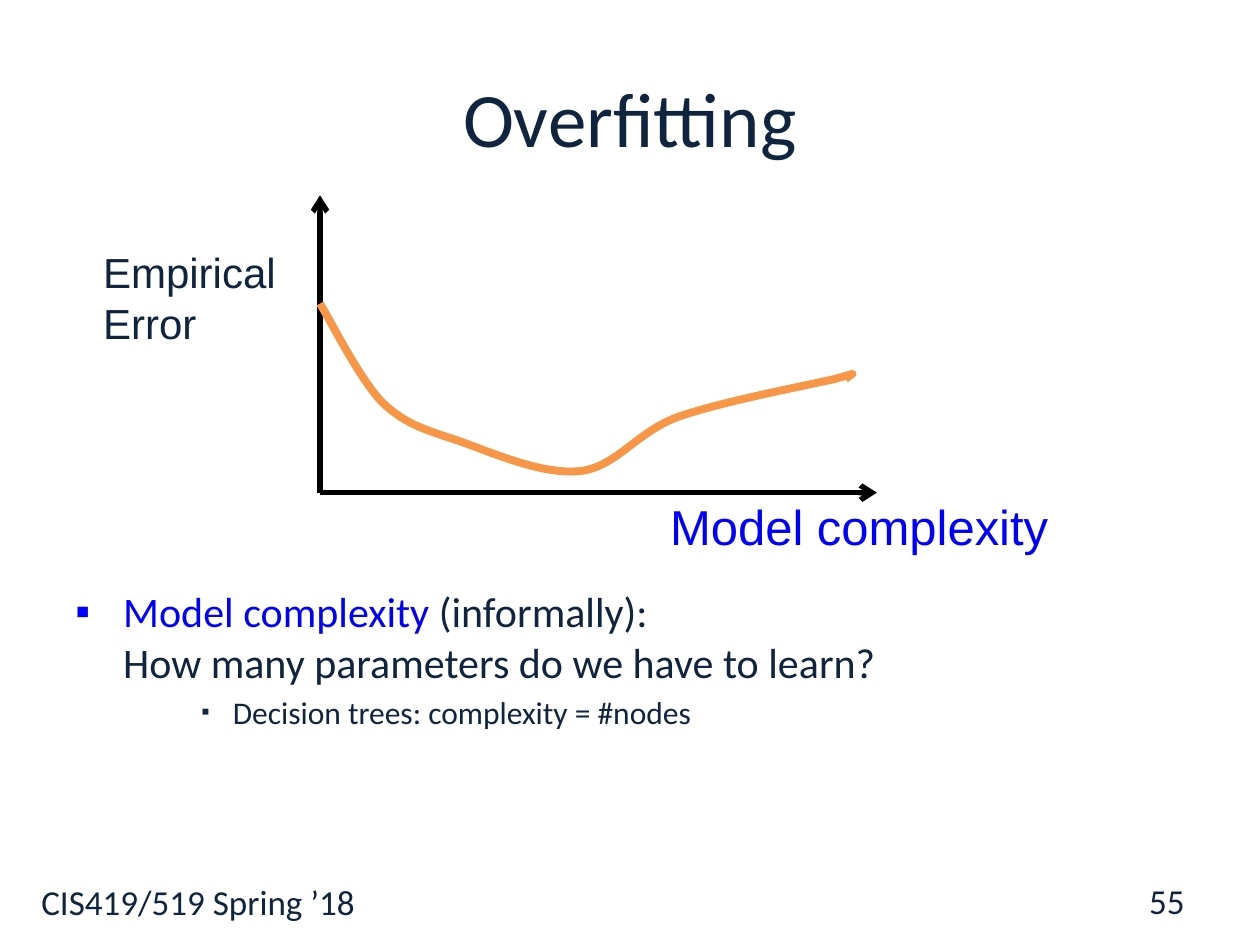
from lxml import etree
from pptx import Presentation
from pptx.dml.color import RGBColor
from pptx.enum.shapes import MSO_CONNECTOR
from pptx.enum.text import MSO_ANCHOR, PP_ALIGN
from pptx.oxml.ns import qn
from pptx.util import Inches, Pt

NAVY = RGBColor(0x0F, 0x24, 0x3E)
BLUE = RGBColor(0x00, 0x00, 0xFF)
BLACK = RGBColor(0x00, 0x00, 0x00)
ORANGE = RGBColor(0xF7, 0x96, 0x46)

# Content: text, box (left, top, width, height), size, font, colour, align, anchor
LEFT, CENTER, RIGHT = PP_ALIGN.LEFT, PP_ALIGN.CENTER, PP_ALIGN.RIGHT
TOP, MIDDLE = MSO_ANCHOR.TOP, MSO_ANCHOR.MIDDLE
LABELS = [
    ("CIS419/519 Spring ’18", (0.23, 6.94, 9.6, 0.56), 20, "Calibri", NAVY, LEFT, TOP),
    ("Model complexity", (5.22, 3.89, 3.86, 0.57), 28, "Arial", BLUE, LEFT, TOP),
    ("Empirical\nError", (0.72, 1.91, 1.94, 0.91), 24, "Arial", NAVY, LEFT, TOP),
    ("Overfitting", (0.5, 0.3, 9, 1.25), 44, "Calibri", NAVY, CENTER, MIDDLE),
    ("55", (7.17, 6.95, 2.33, 0.4), 20, "Calibri", NAVY, RIGHT, MIDDLE),
]

# Bullets: lines of (text, colour) runs, size, level, margin, hanging, bullet %
BODY_BOX = (0.5, 4.6, 9, 2.1)
BULLETS = [
    ([[("Model complexity ", BLUE), ("(informally):", NAVY)],
      [("How many parameters do we have to learn?", NAVY)]], 24, 0, 0.38, 0.38, 100),
    ([[("Decision trees: complexity = #nodes", NAVY)]], 18, 2, 1.25, 0.25, 75),
]

# Graph: axes run from the origin; curve is a start and cubic Bezier triplets
ORIGIN = (2.54, 3.91)
AXIS_ENDS = [(2.54, 1.55), (6.96, 3.91)]
CURVE = [
    (2.54, 2.41),
    (2.62, 2.54), (2.86, 3.02), (3.04, 3.2),
    (3.23, 3.38), (3.41, 3.42), (3.67, 3.51),
    (3.92, 3.6), (4.31, 3.77), (4.6, 3.74),
    (4.89, 3.71), (5.05, 3.43), (5.38, 3.31),
    (5.72, 3.19), (6.4, 3.06), (6.62, 3.01),
    (6.84, 2.95), (6.76, 2.96), (6.71, 3.01),
]

prs = Presentation()
prs.slide_width, prs.slide_height = Inches(10), Inches(7.5)
slide = prs.slides.add_slide(prs.slide_layouts[6])
shapes = slide.shapes


def add_box(box, anchor=TOP):
    tf = shapes.add_textbox(*map(Inches, box)).text_frame
    tf.word_wrap = True
    tf.vertical_anchor = anchor
    return tf


def style(run, size, font, color):
    run.font.size = Pt(size)
    run.font.name = font
    run.font.color.rgb = color


def add_axis(start, end):
    axis = shapes.add_connector(MSO_CONNECTOR.STRAIGHT, *map(Inches, start + end))
    axis.line.color.rgb = BLACK
    axis.line.width = Pt(3)
    ln = axis._element.spPr.find(qn("a:ln"))
    etree.SubElement(ln, qn("a:tailEnd"), type="arrow")
    etree.SubElement(axis._element.spPr, qn("a:effectLst"))


def add_curve(points):
    start, *rest = [(Inches(x), Inches(y)) for x, y in points]
    builder = shapes.build_freeform(*start)
    builder.add_line_segments(rest, close=False)
    sp = builder.convert_to_shape()
    sp.shadow.inherit = False
    sp.fill.background()
    sp.line.color.rgb = ORANGE
    sp.line.width = Pt(4.5)
    # Regroup every three straight segments as one cubic Bezier
    path = sp._element.find(".//" + qn("a:path"))
    segments = path.findall(qn("a:lnTo"))
    for i in range(0, len(segments), 3):
        cubic = etree.SubElement(path, qn("a:cubicBezTo"))
        for segment in segments[i:i + 3]:
            cubic.append(segment[0])
            path.remove(segment)


def set_bullet(p, margin, hanging, percent):
    pPr = p._p.get_or_add_pPr()
    pPr.set("marL", str(Inches(margin)))
    pPr.set("indent", str(-Inches(hanging)))
    etree.SubElement(pPr, qn("a:buSzPct"), val=str(percent * 1000))
    etree.SubElement(pPr, qn("a:buFont"), typeface="Arial")
    etree.SubElement(pPr, qn("a:buChar"), char="▪")


# Graph
for end in AXIS_ENDS:
    add_axis(ORIGIN, end)
add_curve(CURVE)

# Title, axis labels and footer
for text, box, size, font, color, align, anchor in LABELS:
    p = add_box(box, anchor).paragraphs[0]
    p.text = text
    p.alignment = align
    for r in p.runs:
        style(r, size, font, color)

# Bulleted body
tf = add_box(BODY_BOX)
for i, (lines, size, level, margin, hanging, percent) in enumerate(BULLETS):
    p = tf.add_paragraph() if i else tf.paragraphs[0]
    p.level = level
    set_bullet(p, margin, hanging, percent)
    if i:
        p.space_before = Pt(size * 0.2)
    for n, line in enumerate(lines):
        if n:
            p.add_line_break()
        for text, color in line:
            r = p.add_run()
            r.text = text
            style(r, size, "Calibri", color)

prs.save("out.pptx")
